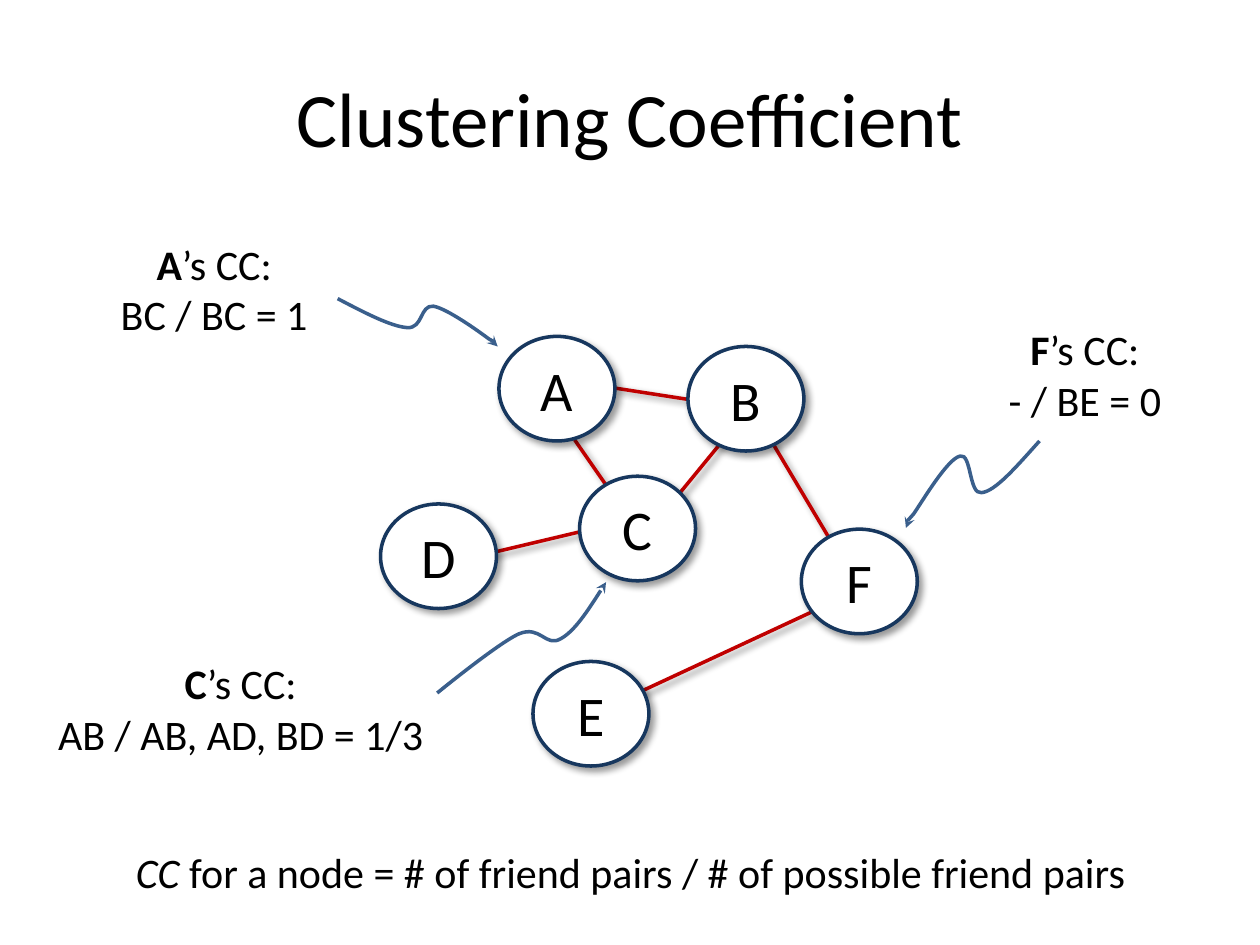
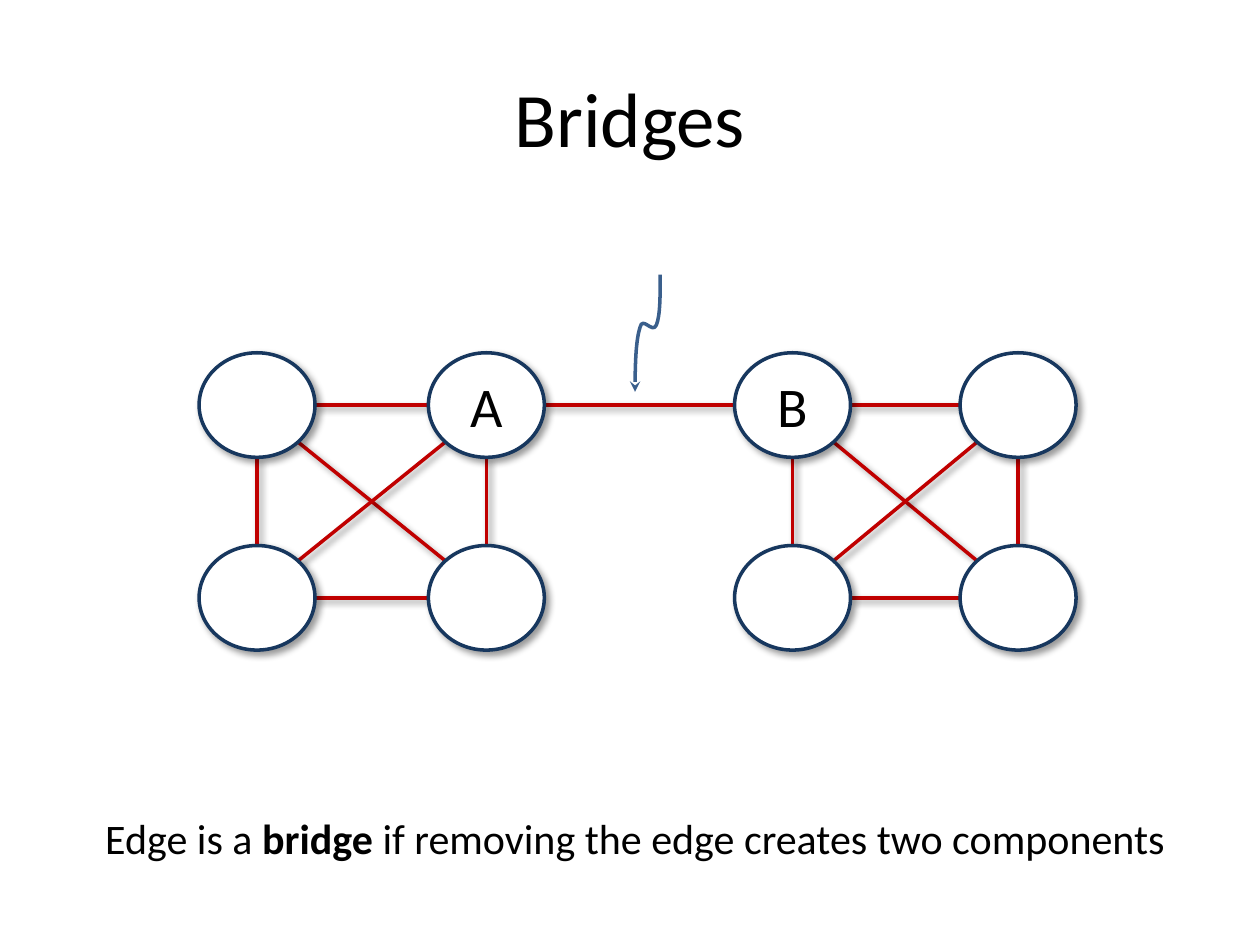
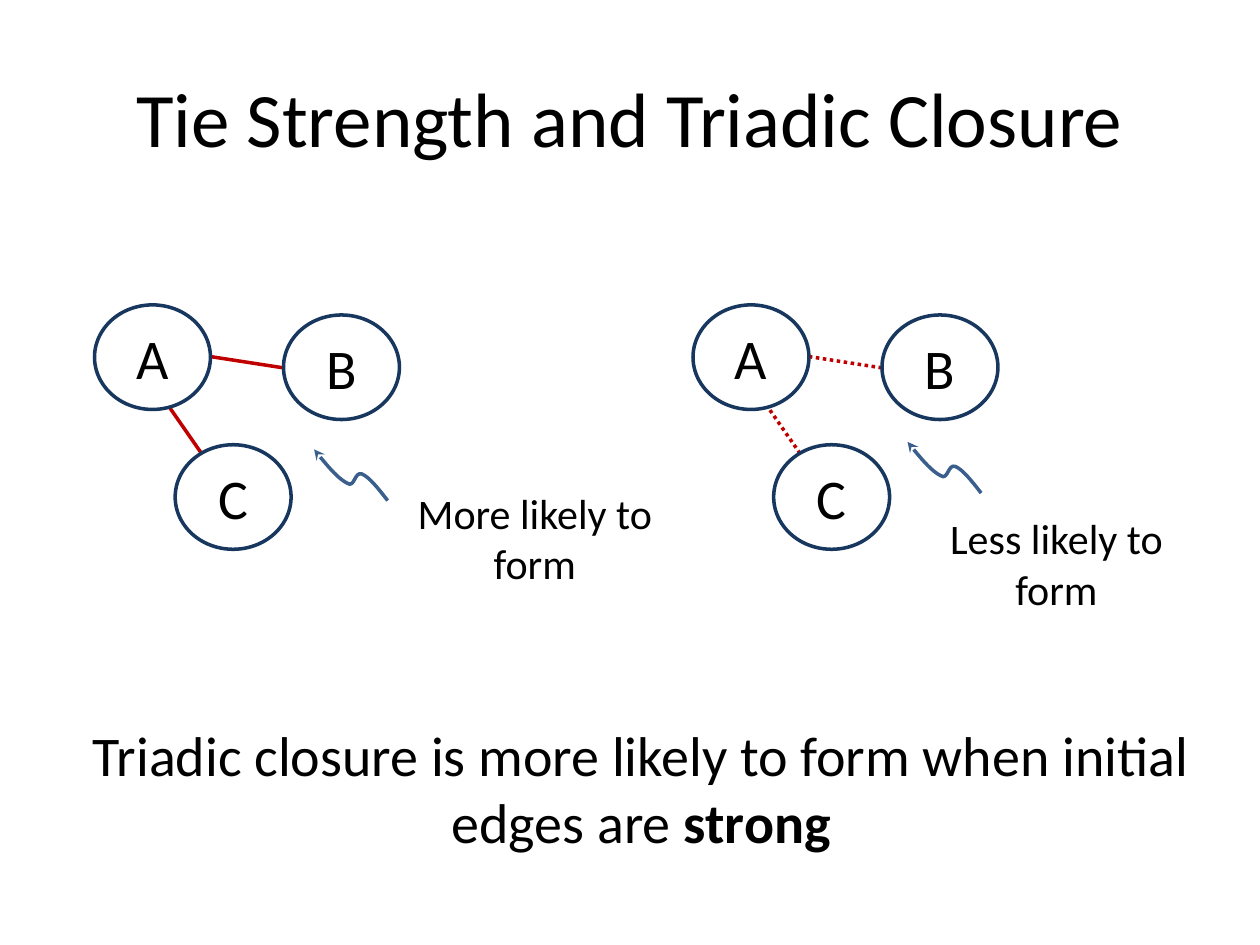
import itertools
import math

import lxml.etree
import pptx
import pptx.dml.color
import pptx.enum.dml
import pptx.enum.shapes
import pptx.enum.text
import pptx.oxml.ns
import pptx.util

Inches = pptx.util.Inches
RGBColor = pptx.dml.color.RGBColor

BLACK = RGBColor(0x00, 0x00, 0x00)
WHITE = RGBColor(0xFF, 0xFF, 0xFF)
NAVY = RGBColor(0x17, 0x37, 0x5E)
RED = RGBColor(0xC0, 0x00, 0x00)
BLUE = RGBColor(0x3A, 0x5F, 0x8C)
FONT = "Calibri"
LINE_WIDTH = pptx.util.Pt(2)
NODE_WIDTH, NODE_HEIGHT = 0.92, 0.83

# Triad: node corners and edge ends, relative to the corner of node A
TRIAD_NODES = {"A": (0, 0), "B": (1.5, 0.08), "C": (0.64, 1.11)}
TRIAD_EDGES = [((0.92, 0.41), (1.5, 0.5)), ((0.85, 1.18), (0.6, 0.82))]

# Slide 1
NETWORK_ORIGIN = (3.96, 2.67)
OTHER_NODES = {"D": (3.02, 4), "E": (4.23, 5.25), "F": (6.36, 4.2)}
OTHER_EDGES = [
    ((4.69, 4.2), (3.68, 4.44)),
    ((6.5, 4.83), (5.06, 5.5)),
    ((6.67, 4.42), (6.08, 3.43)),
    ((5.39, 3.92), (5.75, 3.48)),
]
# Node, its coefficient, text box, Bezier points of the arrow
CALLOUTS = [
    ("A", "BC / BC = 1", (0.45, 1.84, 2.5, 0.91),
     [(2.68, 2.37), (2.89, 2.48), (3.1, 2.59), (3.23, 2.6), (3.36, 2.61),
      (3.33, 2.42), (3.44, 2.43), (3.55, 2.45), (3.8, 2.63), (3.88, 2.69),
      (3.97, 2.74), (3.96, 2.74), (3.95, 2.75)]),
    ("F", "- / BE = 0", (7.65, 2.52, 1.92, 0.91),
     [(8.25, 3.5), (8.07, 3.7), (7.9, 3.9), (7.79, 3.91), (7.69, 3.93),
      (7.71, 3.59), (7.62, 3.62), (7.52, 3.64), (7.32, 3.98), (7.25, 4.08),
      (7.17, 4.17), (7.18, 4.18), (7.19, 4.19)]),
    ("C", "AB / AB, AD, BD = 1/3", (0.2, 5.17, 3.42, 0.91),
     [(3.47, 5.5), (3.47, 5.5), (3.96, 5.1), (4.12, 5.03), (4.29, 4.96),
      (4.33, 5.14), (4.45, 5.07), (4.56, 5.01), (4.69, 4.81), (4.81, 4.62)]),
]
DEFINITION = [[("CC", "italic"),
               (" for a node = # of friend pairs / # of possible friend pairs", "")]]

# Slide 2
CLIQUES = [(1.58, 3.4), (5.83, 7.62)]
ROWS = (2.8, 4.33)
BRIDGE = {"A": (3.4, 2.8), "B": (5.83, 2.8)}
BRIDGE_TEXT = [[("Edge is a ", ""), ("bridge", "bold"),
                (" if removing the edge creates two components", "")]]
BRIDGE_ARROW_BOX = (5.04, 2.18, 0.2, 0.93)
# Bezier points as shares of the box
SQUIGGLE = [(1, 0), (1, 0.18), (1, 0.35), (0.85, 0.43), (0.7, 0.51), (0.3, 0.35),
            (0.2, 0.45), (0.05, 0.55), (0, 0.77), (0, 1)]

# Slide 3: triad corner, edge dash, arrow box, label, label box
TIES = [
    ((0.75, 2.42), None, (2.68, 3.43, 0.21, 0.68),
     "More likely to form", (3.08, 3.82, 2.33, 0.91)),
    ((5.5, 2.42), pptx.enum.dml.MSO_LINE.ROUND_DOT, (7.39, 3.37, 0.21, 0.68),
     "Less likely to form", (7.22, 4.02, 2.33, 0.91)),
]
TIE_ARROW_ROTATION = 322
CLOSURE_TEXT = [[("Triadic closure is more likely to form when initial edges are ", ""),
                 ("strong", "bold")]]


def add_xml(parent, tag, **attributes):
    return lxml.etree.SubElement(parent, pptx.oxml.ns.qn(tag), attributes)


def set_shadow(shape, shadow):
    """Replace the theme's effect by a soft shadow or by none; call after fill and line."""
    effects = add_xml(shape._element.spPr, "a:effectLst")
    if shadow:
        outer = add_xml(effects, "a:outerShdw", blurRad="50800", dist="38100",
                        dir="2700000", algn="tl", rotWithShape="0")
        add_xml(add_xml(outer, "a:srgbClr", val="000000"), "a:alpha", val="40000")


def set_line(shape, color):
    shape.line.color.rgb = color
    shape.line.width = LINE_WIDTH


def write_runs(text_frame, paragraphs, size):
    for index, runs in enumerate(paragraphs):
        paragraph = text_frame.paragraphs[0] if index == 0 else text_frame.add_paragraph()
        paragraph.alignment = pptx.enum.text.PP_ALIGN.CENTER
        for text, style in runs:
            run = paragraph.add_run()
            run.text = text
            run.font.name = FONT
            run.font.size = pptx.util.Pt(size)
            run.font.color.rgb = BLACK
            run.font.bold = style == "bold"
            run.font.italic = style == "italic"


def add_text(slide, box, paragraphs, size=24):
    text_frame = slide.shapes.add_textbox(*map(Inches, box)).text_frame
    text_frame.word_wrap = True
    text_frame.auto_size = pptx.enum.text.MSO_AUTO_SIZE.SHAPE_TO_FIT_TEXT
    write_runs(text_frame, paragraphs, size)


def add_node(slide, corner, label="", shadow=True):
    node = slide.shapes.add_shape(
        pptx.enum.shapes.MSO_SHAPE.OVAL,
        *map(Inches, (*corner, NODE_WIDTH, NODE_HEIGHT)))
    node.fill.solid()
    node.fill.fore_color.rgb = WHITE
    set_line(node, NAVY)
    set_shadow(node, shadow)
    if label:
        node.text_frame.vertical_anchor = pptx.enum.text.MSO_ANCHOR.MIDDLE
        write_runs(node.text_frame, [[(label, "")]], 32)


def add_edge(slide, start, end, shadow=True, dash=None):
    edge = slide.shapes.add_connector(
        pptx.enum.shapes.MSO_CONNECTOR.STRAIGHT, *map(Inches, (*start, *end)))
    set_line(edge, RED)
    if dash:
        edge.line.dash_style = dash
    set_shadow(edge, shadow)


def add_triad(slide, origin, shadow=True, dash=None):
    def place(point):
        return origin[0] + point[0], origin[1] + point[1]

    for start, end in TRIAD_EDGES:
        add_edge(slide, place(start), place(end), shadow, dash)
    for label, corner in TRIAD_NODES.items():
        add_node(slide, place(corner), label, shadow)


def add_curved_arrow(slide, points):
    """Draw a start point followed by triples of cubic Bezier points."""
    points = [(Inches(x), Inches(y)) for x, y in points]
    builder = slide.shapes.build_freeform(*points[0])
    builder.add_line_segments(points[1:], close=False)
    arrow = builder.convert_to_shape()
    segments = arrow._element.findall(".//" + pptx.oxml.ns.qn("a:lnTo"))
    outline = segments[0].getparent()
    for index in range(0, len(segments), 3):
        curve = add_xml(outline, "a:cubicBezTo")
        for segment in segments[index:index + 3]:
            curve.append(segment[0])
            outline.remove(segment)
    arrow.fill.background()
    set_line(arrow, BLUE)
    add_xml(arrow.line._get_or_add_ln(), "a:tailEnd", type="stealth")
    set_shadow(arrow, False)
    return arrow


def squiggle_points(box, upward=False):
    left, top, width, height = box
    return [(left + x * width, top + (1 - y if upward else y) * height)
            for x, y in SQUIGGLE]


def join_nodes(slide, first, second):
    """Draw an edge between the facing sides of two nodes given by their corners."""
    across = (second[0] > first[0]) - (second[0] < first[0])
    down = (second[1] > first[1]) - (second[1] < first[1])
    share = math.sqrt(0.5) if across and down else 1
    center = (NODE_WIDTH / 2, NODE_HEIGHT / 2)
    reach = (across * share * center[0], down * share * center[1])
    start = [first[axis] + center[axis] + reach[axis] for axis in (0, 1)]
    end = [second[axis] + center[axis] - reach[axis] for axis in (0, 1)]
    add_edge(slide, start, end)


def add_titled_slide(presentation, title):
    slide = presentation.slides.add_slide(presentation.slide_layouts[5])
    slide.shapes.title.text_frame.text = title
    return slide


def build_clustering(presentation):
    slide = add_titled_slide(presentation, "Clustering Coefficient")
    for start, end in OTHER_EDGES:
        add_edge(slide, start, end)
    add_triad(slide, NETWORK_ORIGIN)
    for label, corner in OTHER_NODES.items():
        add_node(slide, corner, label)
    for label, coefficient, box, points in CALLOUTS:
        add_text(slide, box, [[(label, "bold"), ("’s CC:", "")], [(coefficient, "")]])
        add_curved_arrow(slide, points)
    add_text(slide, (0.92, 6.67, 8.17, 0.5), DEFINITION)


def build_bridges(presentation):
    slide = add_titled_slide(presentation, "Bridges")
    labels = {corner: label for label, corner in BRIDGE.items()}
    join_nodes(slide, BRIDGE["A"], BRIDGE["B"])
    for columns in CLIQUES:
        corners = list(itertools.product(columns, ROWS))
        for first, second in itertools.combinations(corners, 2):
            join_nodes(slide, first, second)
        for corner in corners:
            add_node(slide, corner, labels.get(corner, ""))
    add_curved_arrow(slide, squiggle_points(BRIDGE_ARROW_BOX))
    add_text(slide, (0.58, 6.4, 8.92, 0.5), BRIDGE_TEXT)


def build_tie_strength(presentation):
    slide = add_titled_slide(presentation, "Tie Strength and Triadic Closure")
    for origin, dash, arrow_box, label, label_box in TIES:
        add_triad(slide, origin, shadow=False, dash=dash)
        arrow = add_curved_arrow(slide, squiggle_points(arrow_box, upward=True))
        arrow.rotation = TIE_ARROW_ROTATION
        add_text(slide, label_box, [[(label, "")]])
    add_text(slide, (0.63, 5.67, 8.92, 1.18), CLOSURE_TEXT, 32)


def main():
    presentation = pptx.Presentation()
    presentation.slide_width = Inches(10)
    presentation.slide_height = Inches(7.5)
    build_clustering(presentation)
    build_bridges(presentation)
    build_tie_strength(presentation)
    presentation.save("out.pptx")


if __name__ == "__main__":
    main()
